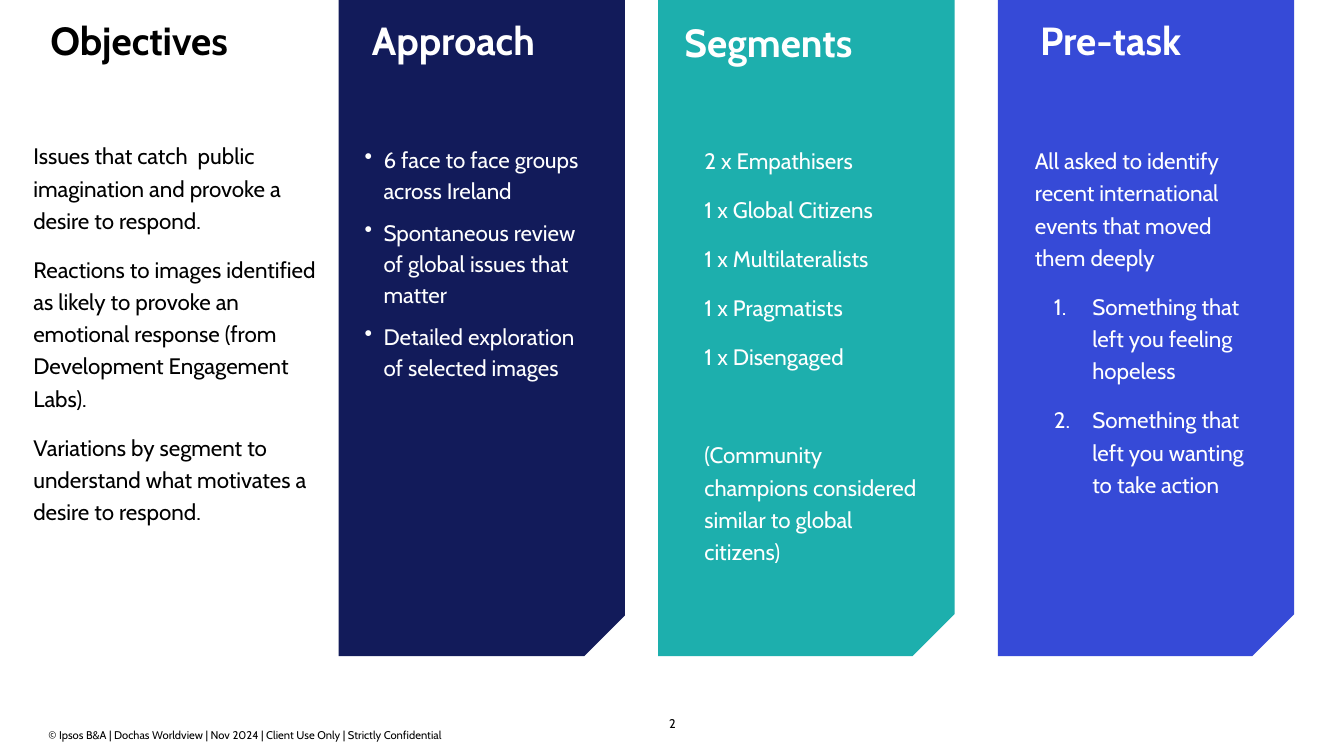
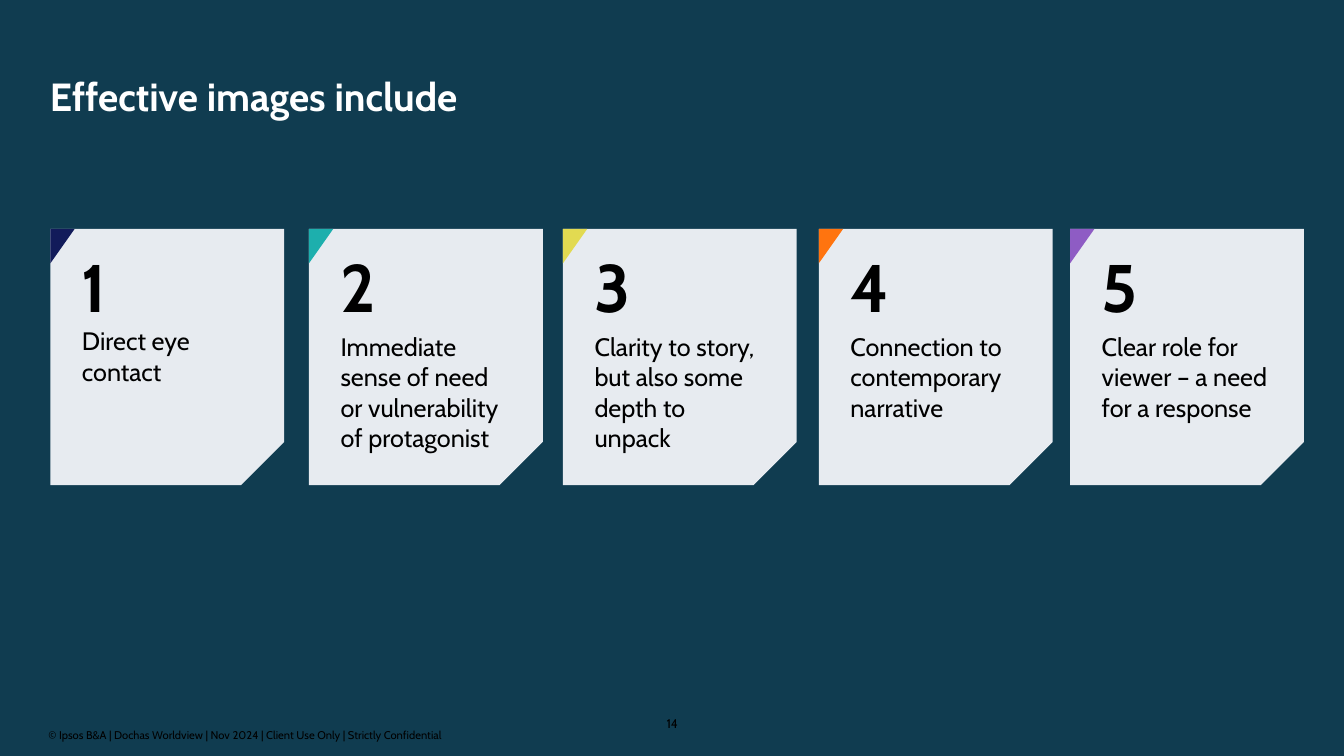
from pptx import Presentation
from pptx.dml.color import RGBColor
from pptx.enum.shapes import MSO_SHAPE
from pptx.enum.text import MSO_ANCHOR, PP_ALIGN
from pptx.oxml.xmlchemy import OxmlElement
from pptx.util import Pt

SNIP, WEDGE = MSO_SHAPE.SNIP_1_RECTANGLE, MSO_SHAPE.RIGHT_TRIANGLE
TOP, BOTTOM = MSO_ANCHOR.TOP, MSO_ANCHOR.BOTTOM
LEFT, CENTER = PP_ALIGN.LEFT, PP_ALIGN.CENTER
FONT = "Cabin"
BLACK, WHITE, NAVY, TEAL = "000000", "FFFFFF", "121B5A", "1DAFAD"
BLUE, SEA, PALE = "364AD7", "103C50", "E7EBF0"
NOTE = "© Ipsos B&A | Dochas Worldview | Nov 2024 | Client Use Only | Strictly Confidential"
PAD = (7.2, 3.6, 7.2, 3.6)
BARE = (0, 0, 0, 0)

BODY = {"size": 16, "line": 1.2, "before": 6, "after": 6}
DOTS = {**BODY, "line": 1.15, "before": 4, "after": 4,
        "mark": ("a:buChar", "char", "•"), "indent": 13.5, "hang": 13.5}
STEP = {"mark": ("a:buAutoNum", "type", "arabicPeriod"), "indent": 41, "hang": 27.4}

COLUMNS = [
    {"title": "Objectives", "head": (36, 15.1), "body": (23.8, 206), "pad": BARE,
     "format": BODY, "color": BLACK, "panel": None,
     "lines": ["Issues that catch  public imagination and provoke a desire to respond.",
               "Reactions to images identified as likely to provoke an emotional response "
               "(from Development Engagement Labs).",
               "Variations by segment to understand what motivates a desire to respond."]},
    {"title": "Approach", "head": (265.7, 15.1), "body": (253.4, 172), "pad": PAD,
     "format": DOTS, "color": WHITE, "panel": (241.9, 204.5, NAVY),
     "lines": ["6 face to face groups across Ireland",
               "Spontaneous review of global issues that matter",
               "Detailed exploration of selected images"]},
    {"title": "Segments", "head": (488.9, 16.9), "body": (496.1, 170.6), "pad": PAD,
     "format": BODY, "color": WHITE, "panel": (470.2, 211.7, TEAL),
     "lines": ["2 x Empathisers", "1 x Global Citizens", "1 x Multilateralists",
               "1 x Pragmatists", "1 x Disengaged",
               ("(Community champions considered similar to global citizens)",
                {"before": 41})]},
    {"title": "Pre-task", "head": (743, 15.1), "body": (732.2, 172), "pad": PAD,
     "format": BODY, "color": WHITE, "panel": (712.8, 211.7, BLUE),
     "lines": ["All asked to identify recent international events that moved them deeply",
               ("Something that left you feeling hopeless", STEP),
               ("Something that left you wanting to take action", STEP)]},
]
CARDS = [
    (36, NAVY, "Direct eye contact", 0),
    (220.7, TEAL, "Immediate sense of need or vulnerability of protagonist", 4),
    (402.1, "E2DA51", "Clarity to story, but also some depth to unpack", 4),
    (584.9, "FF740F", "Connection to contemporary narrative", 4),
    (764.4, "8E5CC4", "Clear role for viewer – a need for a response", 4),
]


def rgb(code):
    """Turn a hex string into a colour."""
    return RGBColor.from_string(code)


def write(shape, lines, pad=BARE, anchor=TOP, **base):
    """Fill a shape with paragraphs; a line may carry its own format."""
    frame = shape.text_frame
    frame.word_wrap = True
    frame.vertical_anchor = anchor
    frame.margin_left, frame.margin_top, frame.margin_right, frame.margin_bottom = map(Pt, pad)
    for i, line in enumerate(lines):
        words, extra = (line, {}) if isinstance(line, str) else line
        look = {**base, **extra}
        para = frame.paragraphs[0] if i == 0 else frame.add_paragraph()
        para.alignment = look.get("align", LEFT)
        para.line_spacing = look.get("line", 1.0)
        para.space_before = Pt(look.get("before", 0) if i else 0)
        para.space_after = Pt(look.get("after", 0))
        if "mark" in look:
            tag, key, value = look["mark"]
            props = para._p.get_or_add_pPr()
            props.set("marL", str(Pt(look["indent"])))
            props.set("indent", str(-Pt(look["hang"])))
            mark = OxmlElement(tag)
            mark.set(key, value)
            props.append(mark)
        run = para.add_run()
        run.text = words
        font = run.font
        font.name, font.size = FONT, Pt(look["size"])
        font.bold = look.get("bold", False)
        font.color.rgb = rgb(look.get("color", BLACK))


def label(slide, box, lines, **look):
    """Add a text box."""
    write(slide.shapes.add_textbox(*map(Pt, box)), lines, **look)


def title(slide, box, words, color):
    """Add a heading."""
    label(slide, box, [words], size=28, bold=True, line=0.9, color=color)


def block(slide, kind, box, fill, snip=None):
    """Add a plain filled shape."""
    shape = slide.shapes.add_shape(kind, *map(Pt, box))
    shape.shadow.inherit = False
    shape.fill.solid()
    shape.fill.fore_color.rgb = rgb(fill)
    shape.line.fill.background()
    if snip:
        shape.adjustments[0] = snip
    return shape


def turned(slide, kind, box, fill, snip=None):
    """Add a shape turned a quarter, so that it covers the given box."""
    x, y, w, h = box
    shift = (w - h) / 2
    shape = block(slide, kind, (x + shift, y - shift, h, w), fill, snip)
    shape.rotation = 90
    return shape


def start(deck, back, number):
    """Add a slide with its background, footer and number."""
    slide = deck.slides.add_slide(deck.slide_layouts[6])
    slide.background.fill.solid()
    slide.background.fill.fore_color.rgb = rgb(back)
    label(slide, (34.6, 520.6, 368, 9.4), [NOTE], anchor=BOTTOM, size=8)
    label(slide, (460.8, 510.5, 38.9, 10.8), [number], size=9, line=1.1, align=CENTER)
    return slide


def plan(deck):
    """Build the slide of four columns."""
    slide = start(deck, WHITE, "2")
    for col in COLUMNS:
        if col["panel"]:
            x, wide, fill = col["panel"]
            panel = block(slide, SNIP, (x, 0, wide, 468.7), fill, 0.142)
            panel._element.spPr.xfrm.set("flipV", "1")
        title(slide, (*col["head"], 190, 39), col["title"], col["color"])
        x, wide = col["body"]
        label(slide, (x, 97.9, wide, 273), col["lines"], pad=col["pad"],
              color=col["color"], **col["format"])


def advice(deck):
    """Build the slide of five numbered cards."""
    slide = start(deck, SEA, "14")
    title(slide, (35.6, 55.4, 890, 56), "Effective images include", WHITE)
    top = 163.6
    for i, (x, fill, words, gap) in enumerate(CARDS, 1):
        card = turned(slide, SNIP, (x, top, 167, 183), PALE, 0.185)
        write(card, [(str(i), {"size": 48, "bold": True}),
                     (words, {"before": gap, "after": gap})],
              pad=(11.5, 5.8, 5.8, 22.5), size=18)
        card.text_frame._txBody.bodyPr.set("vert", "vert270")
        turned(slide, WEDGE, (x, top, 17.3, 24.5), fill)


def main():
    """Build and save the deck."""
    deck = Presentation()
    deck.slide_width, deck.slide_height = Pt(960), Pt(540)
    plan(deck)
    advice(deck)
    deck.save("out.pptx")


if __name__ == "__main__":
    main()
